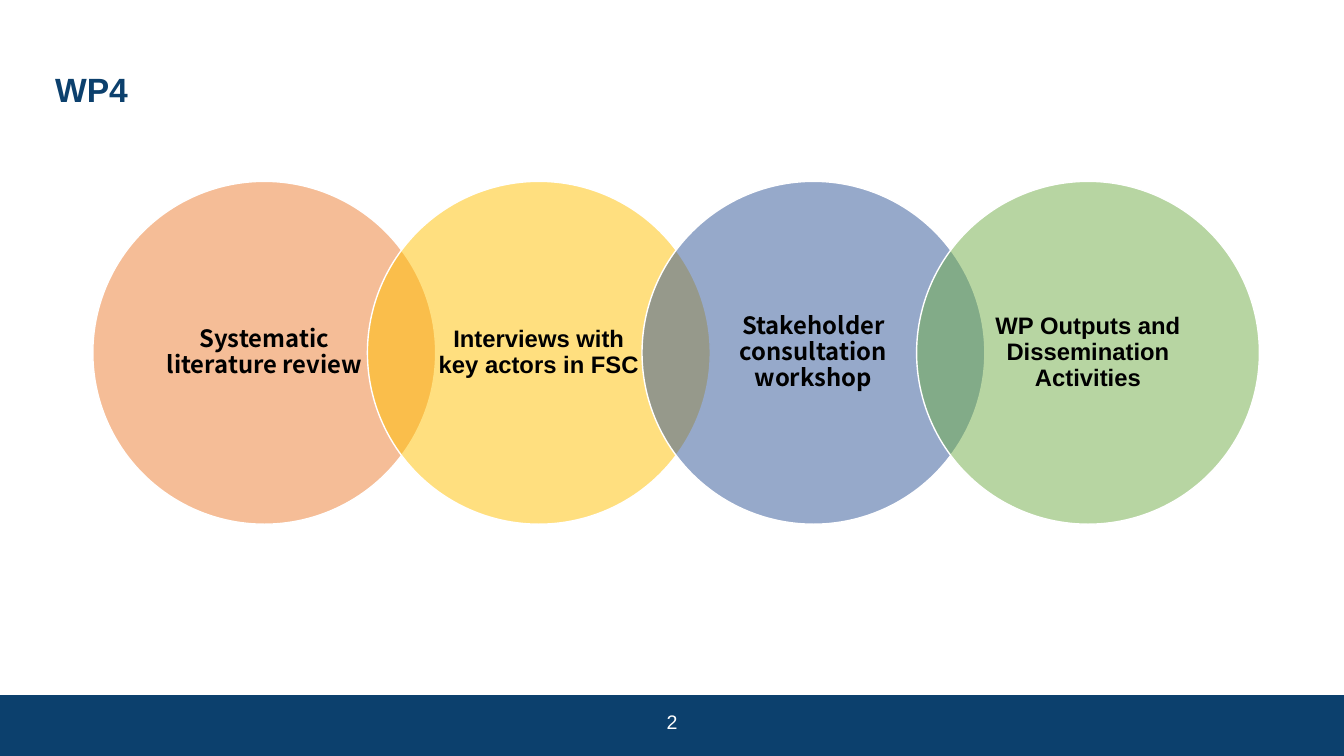
from lxml import etree
from pptx import Presentation
from pptx import util as u
from pptx.dml import color
from pptx.enum import shapes, text
from pptx.oxml import ns

COLORS = {
    "navy": "0C406D",
    "white": "FFFFFF",
    "black": "000000",
    "orange": "ED7D31",
    "yellow": "FFC000",
    "blue": "2F5597",
    "green": "70AD47",
}


def rgb(name):
    return color.RGBColor.from_string(COLORS[name])


def write(shape, words, size, font, ink, align, bold=False, inset=(0.25, 0.13)):
    frame = shape.text_frame
    frame.text = words
    frame.word_wrap = True
    frame.vertical_anchor = text.MSO_ANCHOR.MIDDLE
    frame.margin_left = frame.margin_right = u.Cm(inset[0])
    frame.margin_top = frame.margin_bottom = u.Cm(inset[1])
    paragraph = frame.paragraphs[0]
    paragraph.alignment = align
    paragraph.line_spacing = 0.9
    run = paragraph.runs[0]
    run.font.size = u.Pt(size)
    run.font.name = font
    run.font.bold = bold
    run.font.color.rgb = rgb(ink)


presentation = Presentation()
presentation.slide_width = u.Cm(33.87)
presentation.slide_height = u.Cm(19.05)
slide = presentation.slides.add_slide(presentation.slide_layouts[5])

# Title
title = slide.shapes.title
title.left, title.top = u.Cm(1.14), u.Cm(1.12)
title.width, title.height = u.Cm(31.6), u.Cm(2.39)
write(title, "WP4", 24, "Arial", "navy", text.PP_ALIGN.LEFT, bold=True)

# Footer band with the page number
band = slide.shapes.add_shape(
    shapes.MSO_SHAPE.RECTANGLE, 0, u.Cm(17.52), presentation.slide_width, u.Cm(1.53))
band.shadow.inherit = False
band.fill.solid()
band.fill.fore_color.rgb = rgb("navy")
band.line.fill.background()
page_number = slide.shapes.add_textbox(u.Cm(11.22), u.Cm(17.8), u.Cm(11.43), u.Cm(0.87))
write(page_number, "2", 14, "Arial", "white", text.PP_ALIGN.CENTER)

# Chain of overlapping translucent circles
steps = [
    ("Systematic literature review", "Noto Sans CJK SC", "orange"),
    ("Interviews with key actors in FSC", "Arial", "yellow"),
    ("Stakeholder consultation workshop", "Noto Sans CJK SC", "blue"),
    ("WP Outputs and Dissemination Activities", "Arial", "green"),
]
diameter, pitch = 8.64, 6.92
for index, (words, font, tint) in enumerate(steps):
    circle = slide.shapes.add_shape(
        shapes.MSO_SHAPE.OVAL, u.Cm(2.34 + index * pitch), u.Cm(4.57),
        u.Cm(diameter), u.Cm(diameter))
    circle.shadow.inherit = False
    circle.fill.solid()
    circle.fill.fore_color.rgb = rgb(tint)
    fill_color = circle.fill._xPr.find(ns.qn("a:solidFill"))[0]
    etree.SubElement(fill_color, ns.qn("a:alpha"), val="50000")
    circle.line.color.rgb = rgb("white")
    circle.line.width = u.Pt(1)
    write(circle, words, 17, font, "black", text.PP_ALIGN.CENTER,
          bold=True, inset=(0.48, 0.05))

presentation.save("out.pptx")
